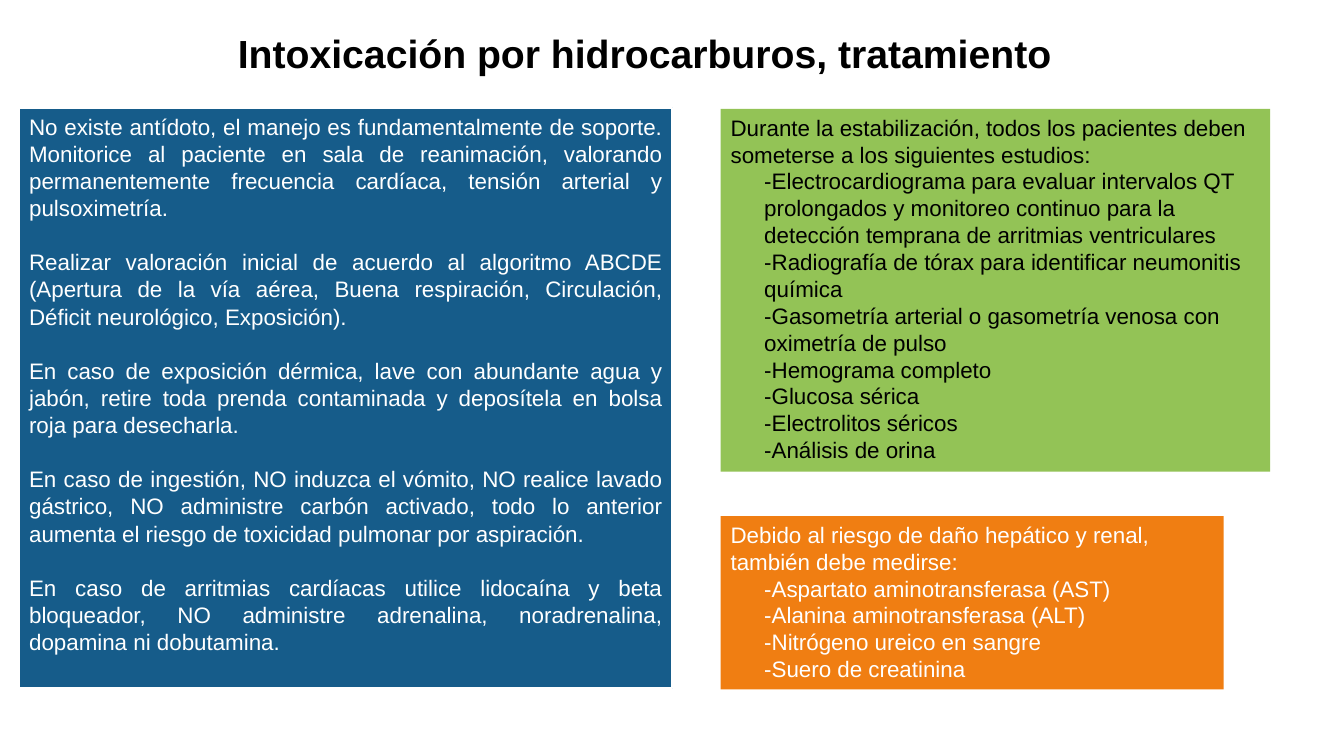
from pptx import Presentation
from pptx import util as u
from pptx.dml.color import RGBColor
from pptx.enum import shapes, text

Pt = u.Pt
FONT = "Arial"
WHITE = "FFFFFF"
BLACK = "000000"

MANAGEMENT = [
    "No existe antídoto, el manejo es fundamentalmente de soporte. Monitorice al paciente en sala de reanimación, valorando permanentemente frecuencia cardíaca, tensión arterial y pulsoximetría.",
    "Realizar valoración inicial de acuerdo al algoritmo ABCDE (Apertura de la vía aérea, Buena respiración, Circulación, Déficit neurológico, Exposición).",
    "En caso de exposición dérmica, lave con abundante agua y jabón, retire toda prenda contaminada y deposítela en bolsa roja para desecharla.",
    "En caso de ingestión, NO induzca el vómito, NO realice lavado gástrico, NO administre carbón activado, todo lo anterior aumenta el riesgo de toxicidad pulmonar por aspiración.",
    "En caso de arritmias cardíacas utilice lidocaína y beta bloqueador, NO administre adrenalina, noradrenalina, dopamina ni dobutamina.",
]
STUDIES = [
    "Durante la estabilización, todos los pacientes deben someterse a los siguientes estudios:",
    "-Electrocardiograma para evaluar intervalos QT prolongados y monitoreo continuo para la detección temprana de arritmias ventriculares",
    "-Radiografía de tórax para identificar neumonitis química",
    "-Gasometría arterial o gasometría venosa con oximetría de pulso",
    "-Hemograma completo",
    "-Glucosa sérica",
    "-Electrolitos séricos",
    "-Análisis de orina",
]
ORGAN_TESTS = [
    "Debido al riesgo de daño hepático y renal, también debe medirse:",
    "-Aspartato aminotransferasa (AST)",
    "-Alanina aminotransferasa (ALT)",
    "-Nitrógeno ureico en sangre",
    "-Suero de creatinina",
]


def color(value):
    return RGBColor.from_string(value)


def format_font(paragraph, size, ink, bold=False):
    paragraph.font.name = FONT
    paragraph.font.size = Pt(size)
    paragraph.font.bold = bold
    paragraph.font.color.rgb = color(ink)


def place_title(slide, box, wording):
    title = slide.shapes.title
    title.left, title.top, title.width, title.height = map(Pt, box)
    frame = title.text_frame
    frame.text = wording
    frame.vertical_anchor = text.MSO_ANCHOR.MIDDLE
    paragraph = frame.paragraphs[0]
    paragraph.alignment = text.PP_ALIGN.LEFT
    paragraph.line_spacing = 0.9
    format_font(paragraph, 28, BLACK, bold=True)


def add_panel(slide, box, fill, ink, wordings):
    shape = slide.shapes.add_shape(shapes.MSO_SHAPE.RECTANGLE, *map(Pt, box))
    shape.shadow.inherit = False
    shape.fill.solid()
    shape.fill.fore_color.rgb = color(fill)
    shape.line.fill.background()
    frame = shape.text_frame
    frame.word_wrap = True
    frame.vertical_anchor = text.MSO_ANCHOR.TOP
    for index, wording in enumerate(wordings):
        paragraph = frame.paragraphs[0] if index == 0 else frame.add_paragraph()
        paragraph.text = wording
        paragraph.alignment = text.PP_ALIGN.LEFT
        format_font(paragraph, 16, ink)
    return shape


def add_management(slide, box):
    shape = add_panel(slide, box, "165C8A", WHITE, MANAGEMENT)
    shape.line.color.rgb = color(WHITE)
    shape.line.width = Pt(1.5)
    for index, paragraph in enumerate(shape.text_frame.paragraphs):
        paragraph.alignment = text.PP_ALIGN.JUSTIFY
        paragraph.line_spacing = 1.01
        if index:
            paragraph.space_before = Pt(19.4)


def add_checklist(slide, box, fill, ink, wordings):
    shape = add_panel(slide, box, fill, ink, wordings)
    for paragraph in shape.text_frame.paragraphs[1:]:
        properties = paragraph._p.get_or_add_pPr()
        properties.set("marL", str(Pt(24)))
        properties.set("indent", "0")


def main():
    presentation = Presentation()
    presentation.slide_width = Pt(960)
    presentation.slide_height = Pt(540)
    slide = presentation.slides.add_slide(presentation.slide_layouts[5])
    add_management(slide, (13.7, 77, 466.6, 414.7))
    add_checklist(slide, (514.8, 77.8, 392.4, 259.2), "93C356", BLACK, STUDIES)
    add_checklist(slide, (514.8, 368.6, 359.3, 123.8), "F07E12", WHITE, ORGAN_TESTS)
    place_title(slide, (162.7, 8.6, 667.4, 61.9), "Intoxicación por hidrocarburos, tratamiento")
    presentation.save("out.pptx")


if __name__ == "__main__":
    main()
